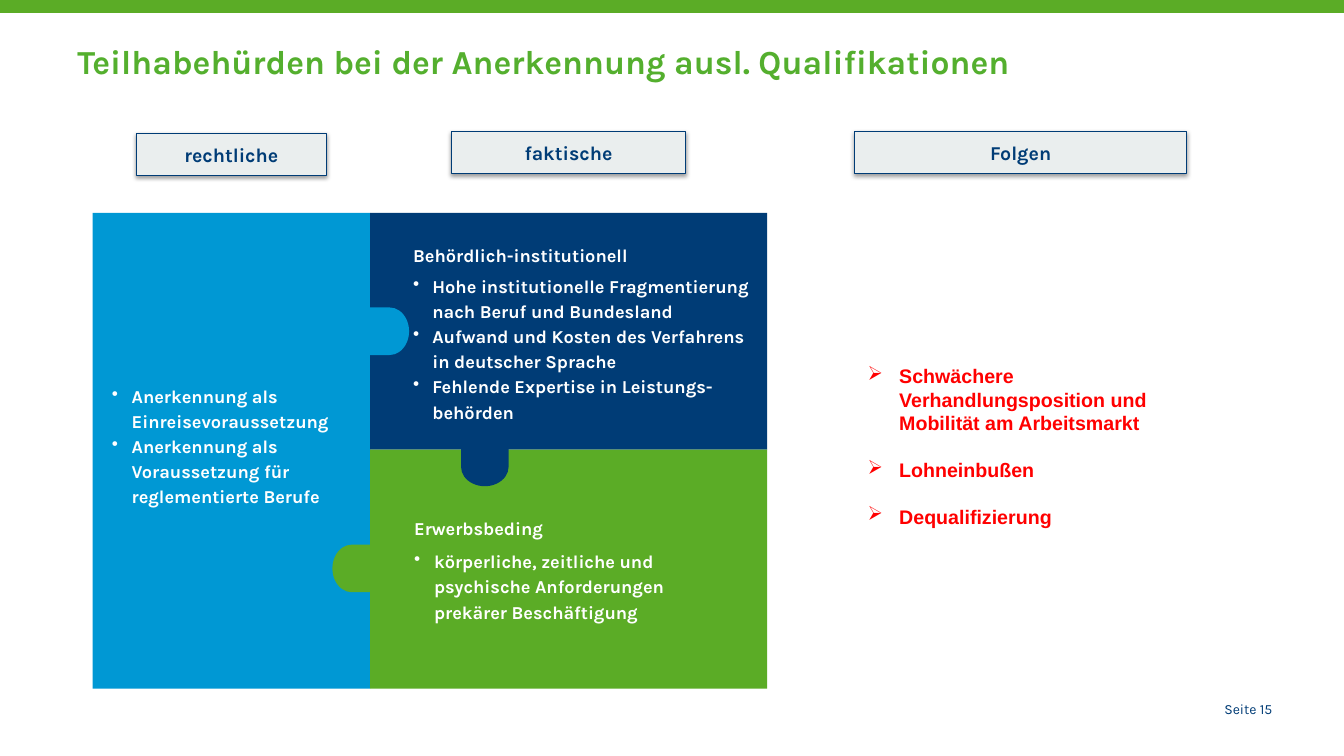
"""Builds the slide on hurdles to the recognition of foreign qualifications."""
from lxml import etree
from pptx import Presentation
from pptx.dml.color import RGBColor
from pptx.enum import shapes, text
from pptx.oxml import parse_xml
from pptx.util import Pt

GREEN = RGBColor(0x5B, 0xAC, 0x26)
TITLE_GREEN = RGBColor(0x54, 0xAF, 0x2E)
NAVY = RGBColor(0x00, 0x3C, 0x76)
BLUE = RGBColor(0x00, 0x98, 0xD4)
GREY = RGBColor(0xEA, 0xEE, 0xEE)
WHITE = RGBColor(0xFF, 0xFF, 0xFF)
RED = RGBColor(0xFF, 0x00, 0x00)
DRAWING = "http://schemas.openxmlformats.org/drawingml/2006/main"
LABEL_SHADOW = (
    f'<a:effectLst xmlns:a="{DRAWING}"><a:outerShdw blurRad="{Pt(3.1)}" dist="{Pt(1.6)}" '
    'dir="5400000" algn="t" rotWithShape="0"><a:srgbClr val="000000">'
    '<a:alpha val="38000"/></a:srgbClr></a:outerShdw></a:effectLst>'
)
RECTANGLE = shapes.MSO_SHAPE.RECTANGLE
DELAY = shapes.MSO_SHAPE.FLOWCHART_DELAY
LEFT, CENTER, RIGHT = text.PP_ALIGN.LEFT, text.PP_ALIGN.CENTER, text.PP_ALIGN.RIGHT
TOP, MIDDLE = text.MSO_ANCHOR.TOP, text.MSO_ANCHOR.MIDDLE

presentation = Presentation()
presentation.slide_width, presentation.slide_height = Pt(960), Pt(540)
slide = presentation.slides.add_slide(presentation.slide_layouts[6])


def add_block(kind, box, fill, rotation=0):
    shape = slide.shapes.add_shape(kind, *map(Pt, box))
    shape.rotation = rotation
    shape.shadow.inherit = False
    shape.fill.solid()
    shape.fill.fore_color.rgb = fill
    shape.line.fill.background()
    return shape


def write(shape, paragraphs, size, color, font="Karla", bold=True, align=LEFT,
          anchor=MIDDLE, insets=(7.2, 7.2), spacing=1.0):
    """Each paragraph is (words, bullet, indent, space after)."""
    frame = shape.text_frame
    frame.word_wrap = True
    frame.vertical_anchor = anchor
    frame.margin_left, frame.margin_right = map(Pt, insets)
    frame.text = "\n".join(words for words, *_ in paragraphs)
    for paragraph, (_, bullet, indent, gap) in zip(frame.paragraphs, paragraphs):
        paragraph.alignment = align
        paragraph.line_spacing = spacing
        paragraph.space_after = Pt(gap)
        paragraph.font.size = Pt(size)
        for run in paragraph.runs:
            run.font.name, run.font.size, run.font.bold = font, Pt(size), bold
            run.font.color.rgb = color
        if bullet:
            properties = paragraph._p.get_or_add_pPr()
            properties.set("marL", str(Pt(indent)))
            properties.set("indent", str(-Pt(indent)))
            etree.SubElement(properties, f"{{{DRAWING}}}buChar", char=bullet)


add_block(RECTANGLE, (0, -2.2, 960, 11.5), GREEN)

title = slide.shapes.add_textbox(Pt(48.2), Pt(21.6), Pt(864), Pt(90))
write(title, [("Teilhabehürden bei der Anerkennung ausl. Qualifikationen", "", 0, 0)],
      24, TITLE_GREEN, anchor=TOP, spacing=1.14)

page_number = slide.shapes.add_textbox(Pt(816.5), Pt(496.8), Pt(99.4), Pt(19.4))
write(page_number, [("Seite 15", "", 0, 0)], 10, NAVY, bold=False, align=RIGHT, anchor=TOP)

for heading, left, top, width in (
    ("rechtliche", 97.2, 95.4, 136.1),
    ("faktische", 322.4, 94, 167.4),
    ("Folgen", 610.3, 94, 237.6),
):
    label = add_block(RECTANGLE, (left, top, width, 30.2), GREY)
    label.line.color.rgb = NAVY
    label.line.width = Pt(0.75)
    label_properties = label._element.spPr
    label_properties.replace(label_properties[-1], parse_xml(LABEL_SHADOW))
    write(label, [(heading, "", 0, 0)], 14, NAVY, align=CENTER)

consequences = add_block(RECTANGLE, (612.7, 151.9, 237.6, 333.4), WHITE)
write(consequences, [
    ("Schwächere Verhandlungsposition und Mobilität am Arbeitsmarkt", "➢", 22.5, 16.5),
    ("Lohneinbußen", "➢", 22.5, 16.5),
    ("Dequalifizierung", "➢", 22.5, 0),
], 14, RED, font="Arial")

x_left, x_seam, x_right = 66.2, 264.4, 548
y_top, y_seam, y_bottom = 152, 321.2, 492
add_block(RECTANGLE, (x_left, y_top, x_seam - x_left, y_bottom - y_top), BLUE)
add_block(RECTANGLE, (x_seam, y_top, x_right - x_seam, y_seam - y_top), NAVY)
add_block(RECTANGLE, (x_seam, y_seam, x_right - x_seam, y_bottom - y_seam), GREEN)
for left, top, fill, rotation in (
    (237.4, 389, GREEN, 180),
    (264.4, 219.6, BLUE, 0),
    (332.4, 316.4, NAVY, 90),
):
    add_block(DELAY, (left, top, 27.8, 34), fill, rotation)

for box, insets, paragraphs in (
    ((79.9, 173.5, 182.2, 288), (0, 7.2), [
        ("Anerkennung als Einreisevoraussetzung", "•", 14.2, 0),
        ("Anerkennung als Voraussetzung für reglementierte Berufe", "•", 14.2, 0),
    ]),
    ((292.3, 160.6, 249.1, 152.6), (2.9, 2.9), [
        ("Behördlich-institutionell", "", 0, 4.4),
        ("Hohe institutionelle Fragmentierung nach Beruf und Bundesland", "•", 13.7, 0),
        ("Aufwand und Kosten des Verfahrens in deutscher Sprache", "•", 13.7, 0),
        ("Fehlende Expertise in Leistungs-behörden", "•", 13.7, 0),
    ]),
    ((293, 347.8, 237.6, 116.6), (2.9, 2.9), [
        ("Erwerbsbeding", "", 0, 5.6),
        ("körperliche, zeitliche und psychische Anforderungen prekärer Beschäftigung",
         "•", 14.2, 0),
    ]),
):
    panel_text = slide.shapes.add_textbox(*map(Pt, box))
    write(panel_text, paragraphs, 13, WHITE, insets=insets, spacing=1.15)

presentation.save("out.pptx")
